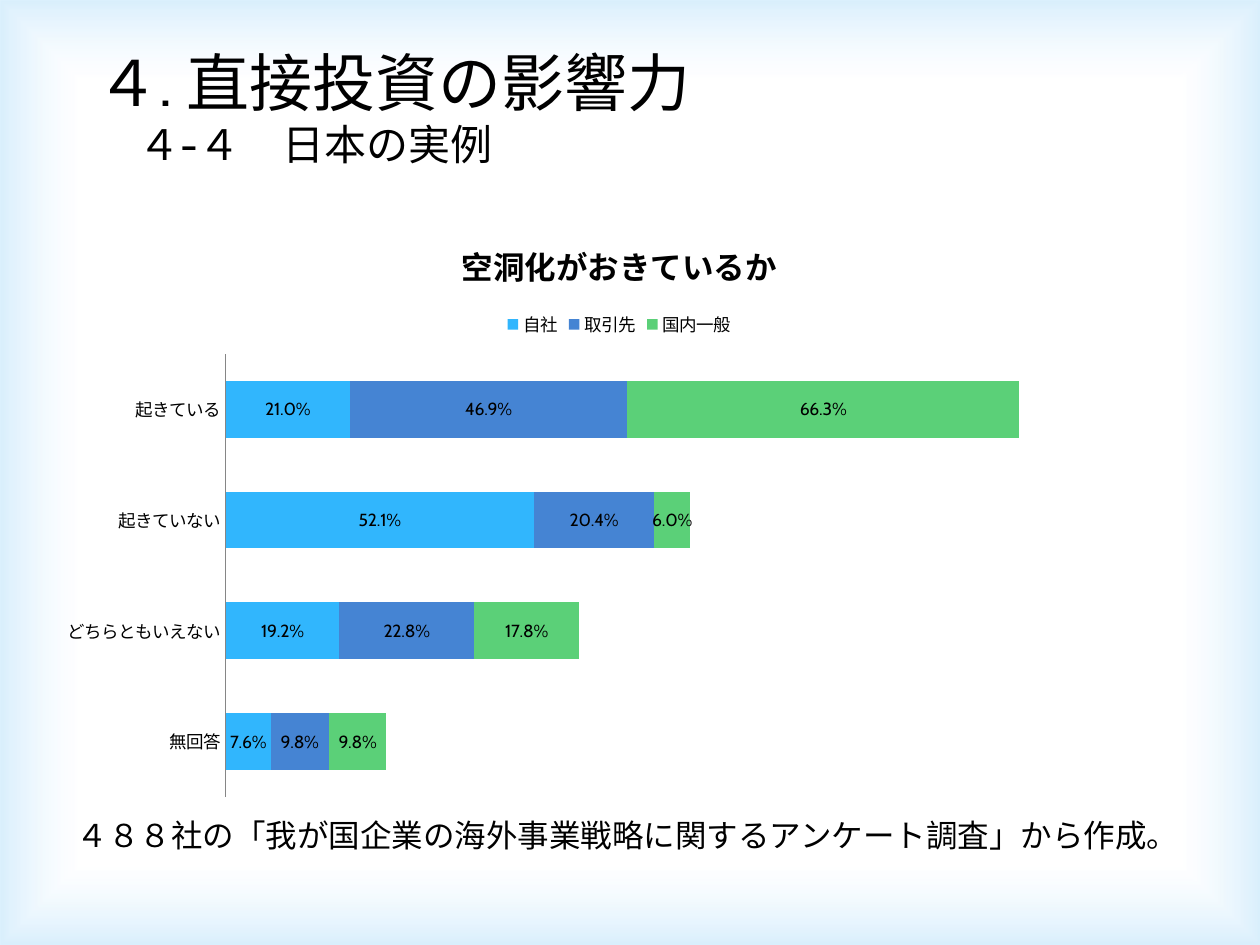
from dataclasses import dataclass

from lxml import etree
from pptx import Presentation
from pptx.chart.chart import Chart
from pptx.chart.data import CategoryChartData
from pptx.dml.color import RGBColor
from pptx.enum.chart import XL_CHART_TYPE, XL_LEGEND_POSITION, XL_TICK_MARK
from pptx.enum.shapes import MSO_SHAPE
from pptx.enum.text import MSO_ANCHOR, PP_ALIGN
from pptx.oxml import parse_xml
from pptx.slide import Slide
from pptx.text.text import Font, TextFrame
from pptx.util import Cm, Pt

STACKED_BAR = XL_CHART_TYPE.BAR_STACKED
LEGEND_TOP = XL_LEGEND_POSITION.TOP
NO_TICK = XL_TICK_MARK.NONE
RECTANGLE = MSO_SHAPE.RECTANGLE
TOP = MSO_ANCHOR.TOP
LEFT = PP_ALIGN.LEFT
DRAWING_NS = "http://schemas.openxmlformats.org/drawingml/2006/main"
TITLE_ONLY_LAYOUT = 5


@dataclass(frozen=True)
class Theme:
    font: str = "Cabin"
    text: str = "000000"
    axis: str = "868686"
    paper: str = "FFFFFF"
    frame: str = "5BBAF6"
    heading_size: int = 36
    subheading_size: int = 24
    body_size: int = 18
    chart_size: int = 10


@dataclass(frozen=True)
class Box:
    left: float
    top: float
    width: float
    height: float

    def lengths(self) -> tuple[Cm, Cm, Cm, Cm]:
        return Cm(self.left), Cm(self.top), Cm(self.width), Cm(self.height)


@dataclass(frozen=True)
class AnswerSeries:
    scope: str
    shares: tuple[float, ...]
    color: str


THEME = Theme()
PAGE = Box(0, 0, 25.4, 19.05)
HEADING_BOX = Box(1.7, 0.74, 16.2, 2.82)
CHART_BOX = Box(0.89, 4.32, 23.19, 11.99)
SOURCE_BOX = Box(1.3, 16.33, 23.77, 1.02)

ANSWERS = ("起きている", "起きていない", "どちらともいえない", "無回答")
SURVEY = (
    AnswerSeries("自社", (0.21, 0.521, 0.192, 0.076), "31B6FD"),
    AnswerSeries("取引先", (0.469, 0.204, 0.228, 0.098), "4584D3"),
    AnswerSeries("国内一般", (0.663, 0.06, 0.178, 0.098), "5BD078"),
)


def style_font(font: Font, size: int, bold: bool = False) -> None:
    font.name = THEME.font
    font.size = Pt(size)
    font.bold = bold
    font.color.rgb = RGBColor.from_string(THEME.text)


def write_lines(frame: TextFrame, lines: dict[str, int]) -> None:
    """Write one left-aligned paragraph per line, each at its own size."""
    frame.text = "\n".join(lines)
    frame.word_wrap = True
    frame.vertical_anchor = TOP
    for paragraph, size in zip(frame.paragraphs, lines.values()):
        paragraph.alignment = LEFT
        for run in paragraph.runs:
            style_font(run.font, size)


def add_glow_frame(slide: Slide) -> None:
    """Lay a translucent glow along the page edges, behind everything else."""
    glow = slide.shapes.add_shape(RECTANGLE, *PAGE.lengths())
    glow.shadow.inherit = False
    glow.line.fill.background()
    gradient = parse_xml(
        f'<a:gradFill xmlns:a="{DRAWING_NS}" rotWithShape="1"><a:gsLst>'
        f'<a:gs pos="83000"><a:srgbClr val="{THEME.paper}"><a:alpha val="11000"/></a:srgbClr></a:gs>'
        f'<a:gs pos="100000"><a:srgbClr val="{THEME.frame}"><a:alpha val="23000"/></a:srgbClr></a:gs>'
        '</a:gsLst><a:path path="rect">'
        '<a:fillToRect l="50000" t="50000" r="50000" b="50000"/></a:path></a:gradFill>'
    )
    properties = glow.element.spPr
    properties.find(f"{{{DRAWING_NS}}}prstGeom").addnext(gradient)
    slide.shapes.element.insert(2, glow.element)


def add_heading(slide: Slide) -> None:
    heading = slide.shapes.title
    heading.left, heading.top, heading.width, heading.height = HEADING_BOX.lengths()
    write_lines(heading.text_frame, {
        "４. 直接投資の影響力": THEME.heading_size,
        "\u3000４-４\u3000日本の実例".replace("\u3000", "　"): THEME.subheading_size,
    })


def style_axes(chart: Chart) -> None:
    answers = chart.category_axis
    answers.reverse_order = True
    answers.major_tick_mark = NO_TICK
    answers.has_major_gridlines = False
    answers.format.line.color.rgb = RGBColor.from_string(THEME.axis)
    answers.format.line.width = Pt(0.75)
    shares = chart.value_axis
    shares.has_major_gridlines = False
    shares.minimum_scale = 0
    shares.maximum_scale = 1.6
    shares.visible = False


def add_survey_chart(slide: Slide) -> None:
    data = CategoryChartData(number_format="0.0%")
    data.categories = ANSWERS
    for answer in SURVEY:
        data.add_series(answer.scope, answer.shares)
    chart = slide.shapes.add_chart(STACKED_BAR, *CHART_BOX.lengths(), data).chart
    style_font(chart.font, THEME.chart_size)

    chart.has_title = True
    chart.chart_title.text_frame.text = "空洞化がおきているか"
    title_run = chart.chart_title.text_frame.paragraphs[0].runs[0]
    style_font(title_run.font, THEME.body_size, bold=True)
    chart.chart_title.include_in_layout = False

    chart.has_legend = True
    chart.legend.position = LEGEND_TOP
    chart.legend.include_in_layout = False
    style_axes(chart)

    plot = chart.plots[0]
    plot.gap_width = 95
    plot.overlap = 100
    plot.vary_by_categories = False
    for bars, answer in zip(plot.series, SURVEY):
        bars.format.fill.solid()
        bars.format.fill.fore_color.rgb = RGBColor.from_string(answer.color)
        labels = bars.data_labels
        labels.show_value = True
        labels.number_format = "0.0%"
        labels.number_format_is_linked = False
        style_font(labels.font, THEME.chart_size)


def add_source_note(slide: Slide) -> None:
    note = slide.shapes.add_textbox(*SOURCE_BOX.lengths())
    write_lines(note.text_frame, {
        "４８８社の「我が国企業の海外事業戦略に関するアンケート調査」から作成。": THEME.body_size,
    })


def main() -> None:
    presentation = Presentation()
    presentation.slide_width = Cm(PAGE.width)
    presentation.slide_height = Cm(PAGE.height)
    slide = presentation.slides.add_slide(presentation.slide_layouts[TITLE_ONLY_LAYOUT])
    add_glow_frame(slide)
    add_survey_chart(slide)
    add_source_note(slide)
    add_heading(slide)
    presentation.save("out.pptx")


if __name__ == "__main__":
    main()
